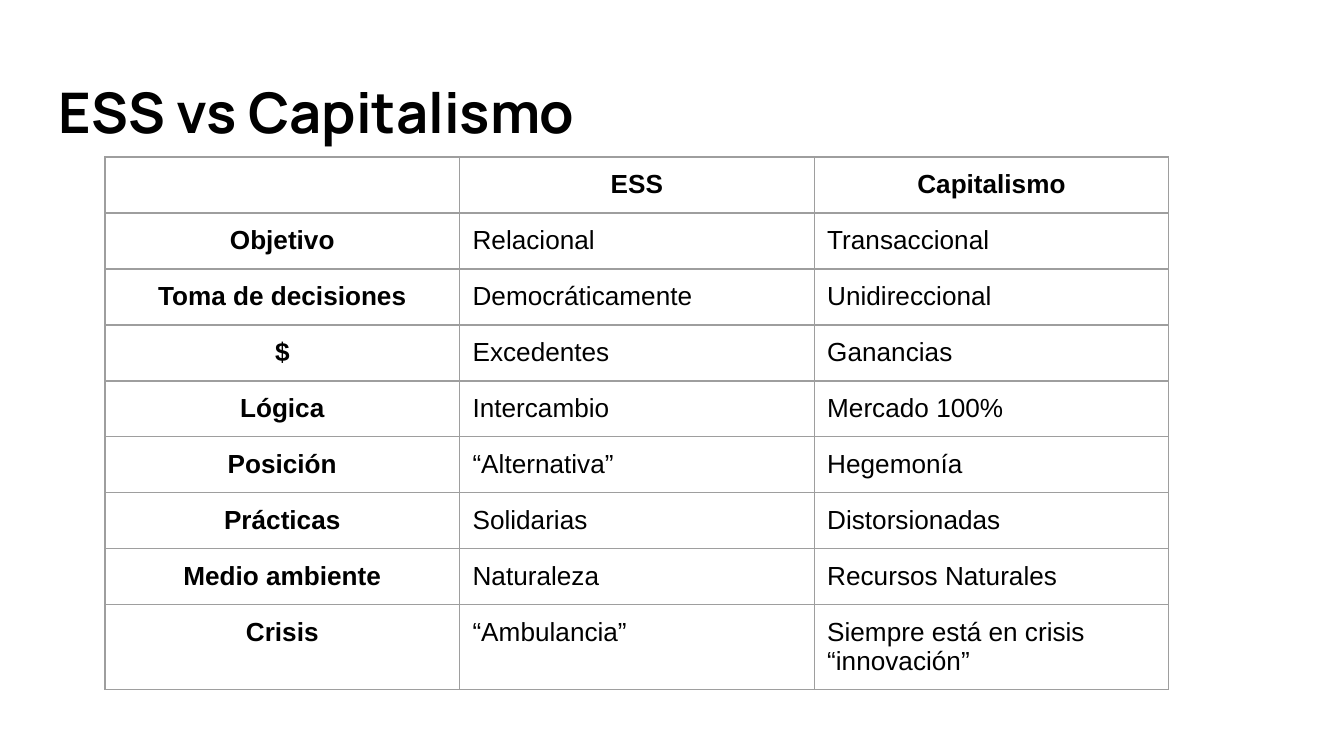
from lxml import etree
from pptx import Presentation
from pptx.dml.color import RGBColor
from pptx.enum.text import MSO_ANCHOR, MSO_AUTO_SIZE, PP_ALIGN
from pptx.oxml import parse_xml
from pptx.oxml.ns import nsdecls
from pptx.util import Pt

TITLE = "ESS vs Capitalismo"
ROWS = [
    ("", "ESS", "Capitalismo"),
    ("Objetivo", "Relacional", "Transaccional"),
    ("Toma de decisiones", "Democráticamente", "Unidireccional"),
    ("$", "Excedentes", "Ganancias"),
    ("Lógica", "Intercambio", "Mercado 100%"),
    ("Posición", "“Alternativa”", "Hegemonía"),
    ("Prácticas", "Solidarias", "Distorsionadas"),
    ("Medio ambiente", "Naturaleza", "Recursos Naturales"),
    ("Crisis", "“Ambulancia”", "Siempre está en crisis “innovación”"),
]

BLACK = RGBColor(0x00, 0x00, 0x00)
GRAY = RGBColor(0x9E, 0x9E, 0x9E)
LEFT, CENTER = PP_ALIGN.LEFT, PP_ALIGN.CENTER
TOP, MIDDLE = MSO_ANCHOR.TOP, MSO_ANCHOR.MIDDLE
NO_AUTOFIT = MSO_AUTO_SIZE.NONE

PX_PER_INCH = 134.4
INSET = 13
ROW_H = 56
TABLE_X, TABLE_Y, TABLE_W = 105, 157, 1064


def px(n):
    return round(n * 914400 / PX_PER_INCH)


def format_paragraph(p, name, size, bold, align):
    p.alignment = align
    p.font.name = name
    p.font.size = Pt(size)
    p.font.bold = bold
    p.font.color.rgb = BLACK


def set_insets(box):
    box.margin_left = box.margin_right = px(INSET)
    box.margin_top = box.margin_bottom = px(INSET)


def add_borders(cell):
    tcPr = cell._tc.get_or_add_tcPr()
    for i, side in enumerate(("lnL", "lnR", "lnT", "lnB")):
        tcPr.insert(i, parse_xml(
            f'<a:{side} {nsdecls("a")} w="{Pt(0.75)}"><a:solidFill>'
            f'<a:srgbClr val="{GRAY}"/></a:solidFill></a:{side}>'))


def add_title(s):
    sp = s.shapes.title
    sp.left, sp.top, sp.width, sp.height = map(px, (46, 66, 1252, 91))
    tf = sp.text_frame
    tf.text = TITLE
    tf.word_wrap = True
    tf.auto_size = NO_AUTOFIT
    tf.vertical_anchor = MIDDLE
    set_insets(tf)
    format_paragraph(tf.paragraphs[0], "Manrope", 30, True, LEFT)


def add_comparison(s):
    table = s.shapes.add_table(
        len(ROWS), len(ROWS[0]), px(TABLE_X), px(TABLE_Y),
        px(TABLE_W), px(ROW_H * len(ROWS))).table
    table.first_row = table.horz_banding = False
    for i, row in enumerate(ROWS):
        for j, text in enumerate(row):
            cell = table.cell(i, j)
            cell.text = text
            cell.fill.background()
            cell.vertical_anchor = TOP
            set_insets(cell)
            add_borders(cell)
            header = i == 0 or j == 0
            p = cell.text_frame.paragraphs[0]
            format_paragraph(p, "Arial", 14, header, CENTER if header else LEFT)
            if not text:
                etree.SubElement(p._p, "{http://schemas.openxmlformats.org/drawingml/2006/main}endParaRPr", sz="1400")


prs = Presentation()
prs.slide_width, prs.slide_height = px(1344), px(756)
s = prs.slides.add_slide(prs.slide_layouts[5])
add_title(s)
add_comparison(s)
prs.save("out.pptx")
